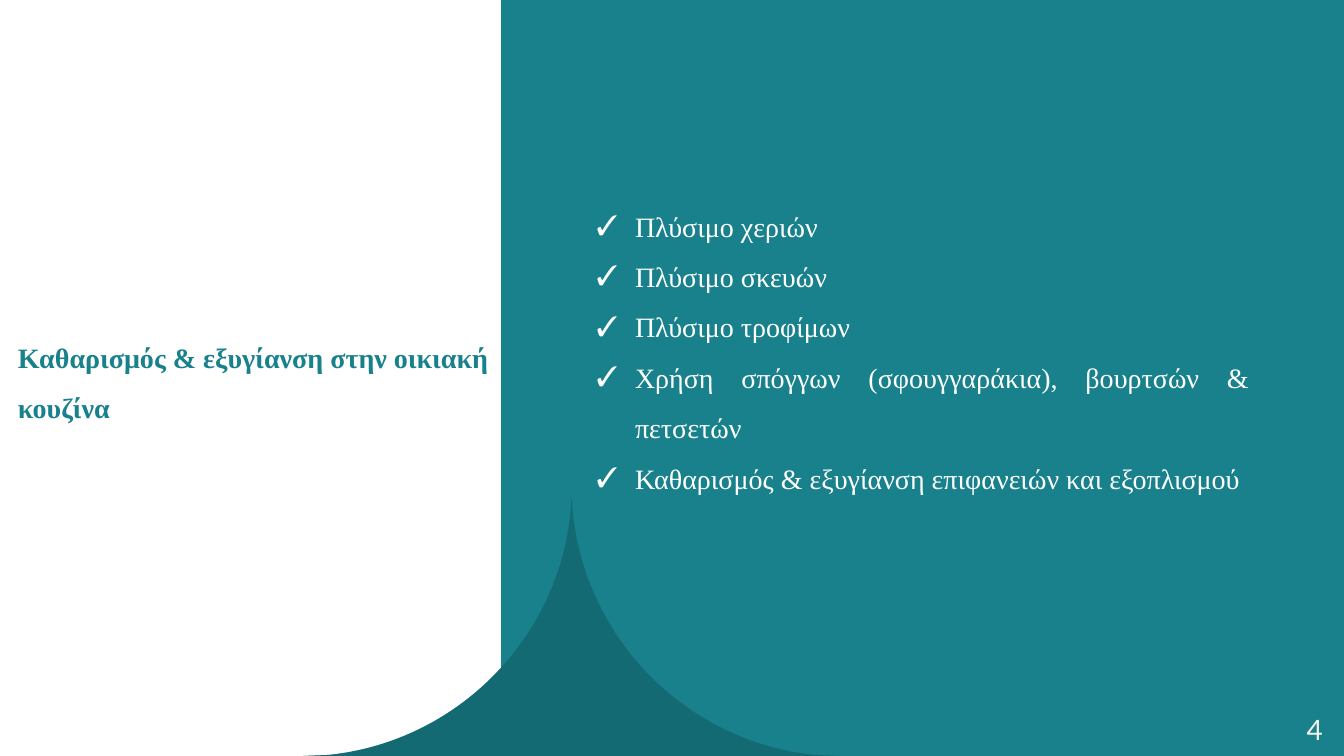
from lxml import etree
from pptx import Presentation
from pptx.dml.color import RGBColor
from pptx.enum.shapes import MSO_SHAPE as SHAPE
from pptx.enum.text import MSO_ANCHOR as ANCHOR, PP_ALIGN as ALIGN
from pptx.oxml.ns import qn
from pptx.util import Inches, Pt

TEAL = RGBColor(0x18, 0x81, 0x8C)
DARK_TEAL = RGBColor(0x12, 0x61, 0x69)
WHITE = RGBColor(0xFF, 0xFF, 0xFF)
CREAM = RGBColor(0xF4, 0xF2, 0xEC)
SERIF = "Times New Roman"


def add_box(x, y, w, h):
    tf = s.shapes.add_textbox(Inches(x), Inches(y), Inches(w), Inches(h)).text_frame
    tf.word_wrap = True
    return tf


def add_run(p, text, font, color, bold=False):
    r = p.add_run()
    r.text = text
    r.font.name = font
    r.font.size = Pt(20)
    r.font.bold = bold
    r.font.color.rgb = color


prs = Presentation()
prs.slide_width, prs.slide_height = Inches(13.33), Inches(7.5)
s = prs.slides.add_slide(prs.slide_layouts[6])
s.background.fill.solid()
s.background.fill.fore_color.rgb = WHITE

# White and teal panels
for x, w, color in [(0, 13.33, WHITE), (4.97, 8.36, TEAL)]:
    panel = s.shapes.add_shape(SHAPE.RECTANGLE, Inches(x), 0, Inches(w), Inches(7.5))
    panel.shadow.inherit = False
    panel.fill.solid()
    panel.fill.fore_color.rgb = color
    panel.line.fill.background()

# Spire: the left flank is mirrored about the axis
AXIS = 5.67
left = [(3.01, 7.5), (3.26, 7.49), (4.53, 7.36), (5.54, 6.34), (5.66, 5.07)]
right = [(2 * AXIS - x, y) for x, y in reversed(left)]
outline = [(Inches(x), Inches(y)) for x, y in left + [(AXIS, 4.93)] + right]

for color, opacity in [(TEAL, 100), (DARK_TEAL, 70)]:
    builder = s.shapes.build_freeform(*outline[0])
    builder.add_line_segments(outline[1:], close=True)
    spire = builder.convert_to_shape()
    spire.shadow.inherit = False
    spire.fill.solid()
    spire.fill.fore_color.rgb = color
    spire.line.fill.background()
    if opacity < 100:
        clr = spire.fill._xPr.find(qn("a:solidFill"))[0]
        etree.SubElement(clr, qn("a:alpha"), val=str(opacity * 1000))
    # Turn the three segments of each flank into one Bezier curve
    segments = list(spire._element.iter(qn("a:lnTo")))
    for first in (1, 6):
        curve = etree.Element(qn("a:cubicBezTo"))
        segments[first].addprevious(curve)
        for segment in segments[first:first + 3]:
            curve.append(segment[0])
            segment.getparent().remove(segment)

# Slide number
tf = add_box(12.46, 7.04, 0.76, 0.4)
tf.vertical_anchor = ANCHOR.MIDDLE
p = tf.paragraphs[0]
p.alignment = ALIGN.RIGHT
add_run(p, "4", "Lato", CREAM)

# Title
p = add_box(0.08, 3.16, 4.93, 1.05).paragraphs[0]
p.line_spacing = 1.5
add_run(p, "Καθαρισμός & εξυγίανση στην οικιακή κουζίνα", SERIF, TEAL, bold=True)

# Checklist
CHECKLIST = [
    "Πλύσιμο χεριών",
    "Πλύσιμο σκευών",
    "Πλύσιμο τροφίμων",
    "Χρήση σπόγγων (σφουγγαράκια), βουρτσών & πετσετών",
    "Καθαρισμός & εξυγίανση επιφανειών και εξοπλισμού",
]
INDENT = Inches(0.38)
tf = add_box(5.82, 1.86, 6.67, 3.07)
for i, item in enumerate(CHECKLIST):
    p = tf.add_paragraph() if i else tf.paragraphs[0]
    p.alignment = ALIGN.JUSTIFY
    p.line_spacing = 1.5
    pPr = p._p.get_or_add_pPr()
    pPr.set("marL", str(INDENT))
    pPr.set("indent", str(-INDENT))
    etree.SubElement(pPr, qn("a:buFont"), typeface=SERIF)
    etree.SubElement(pPr, qn("a:buChar"), char="✓")
    add_run(p, item, SERIF, WHITE)

prs.save("out.pptx")
